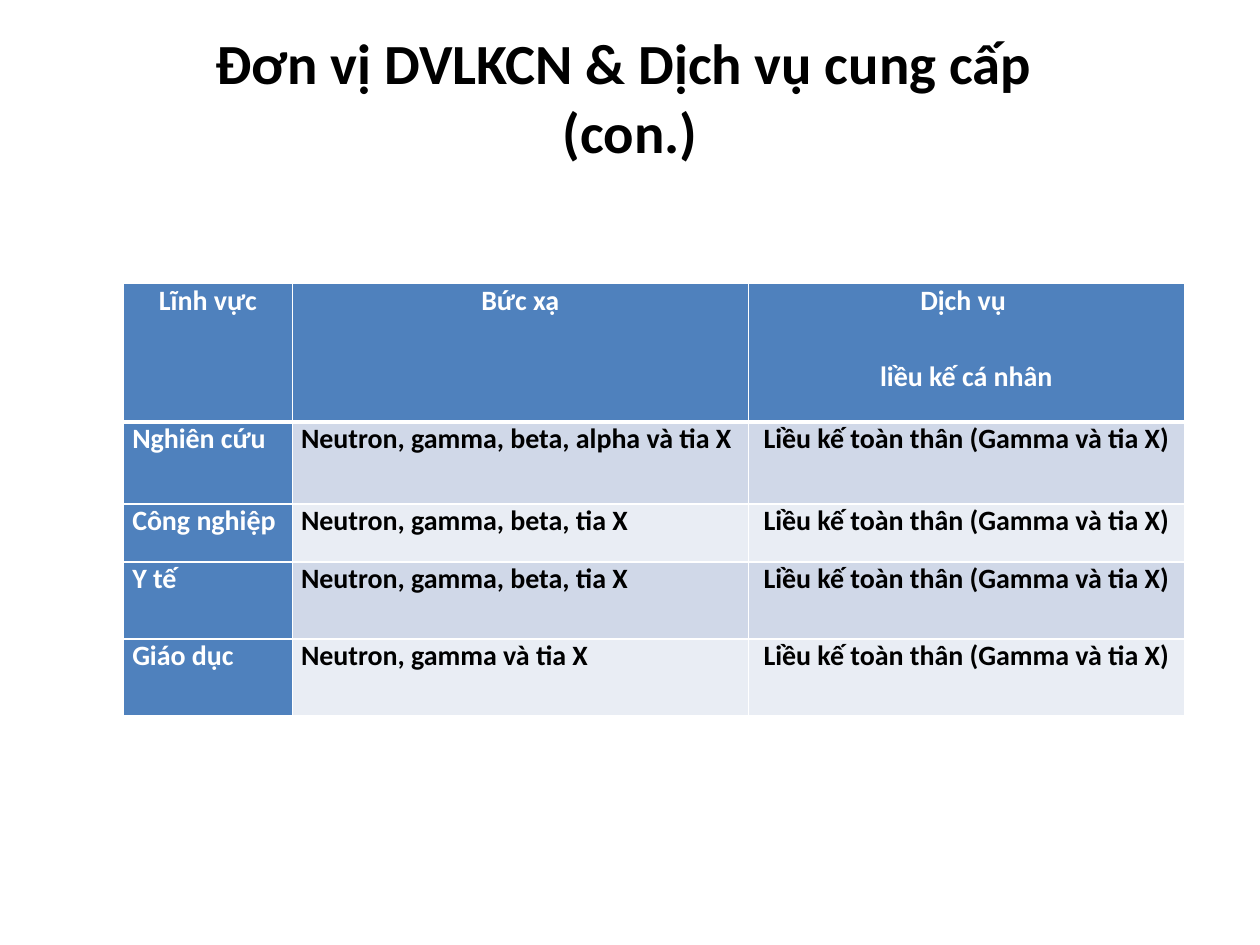
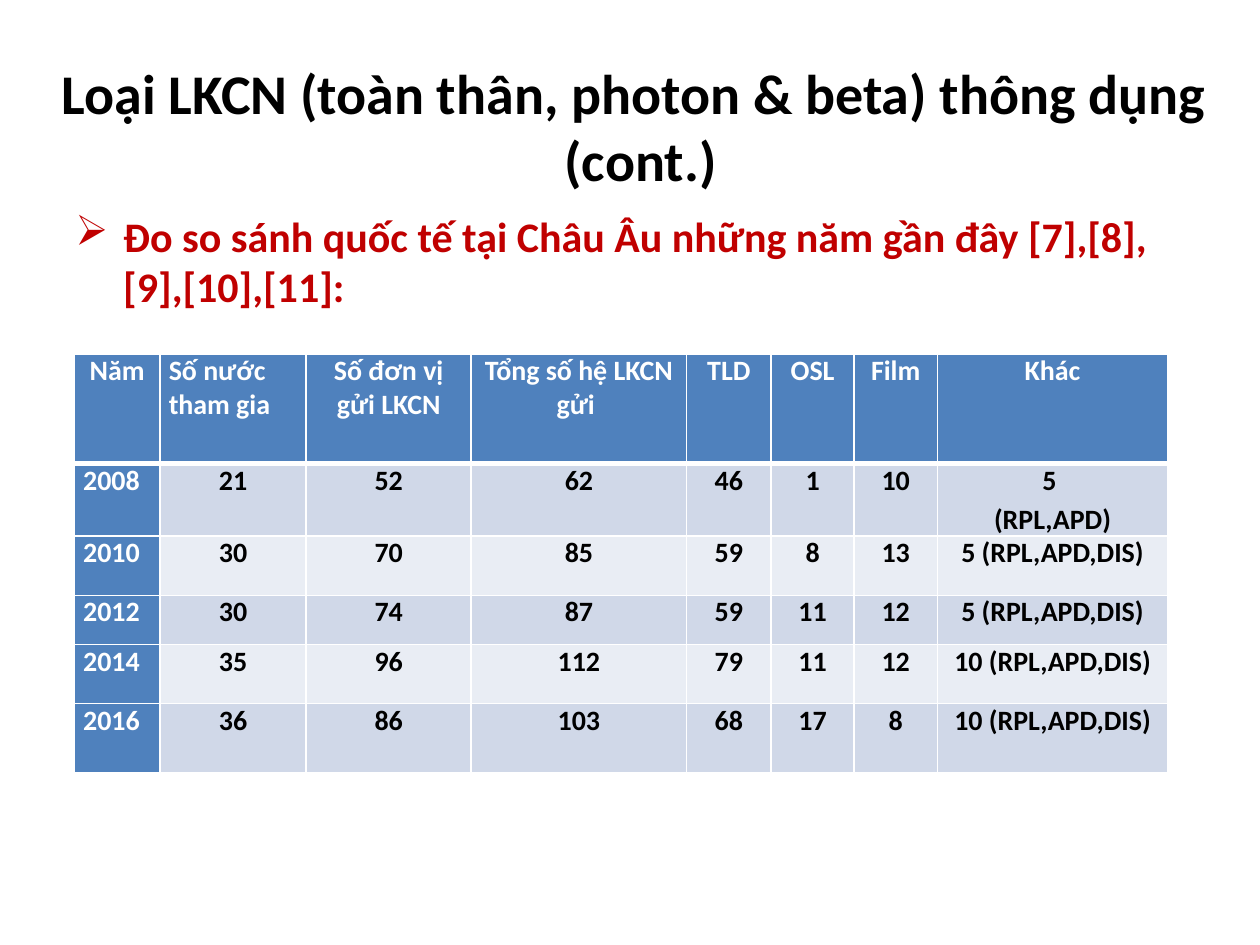
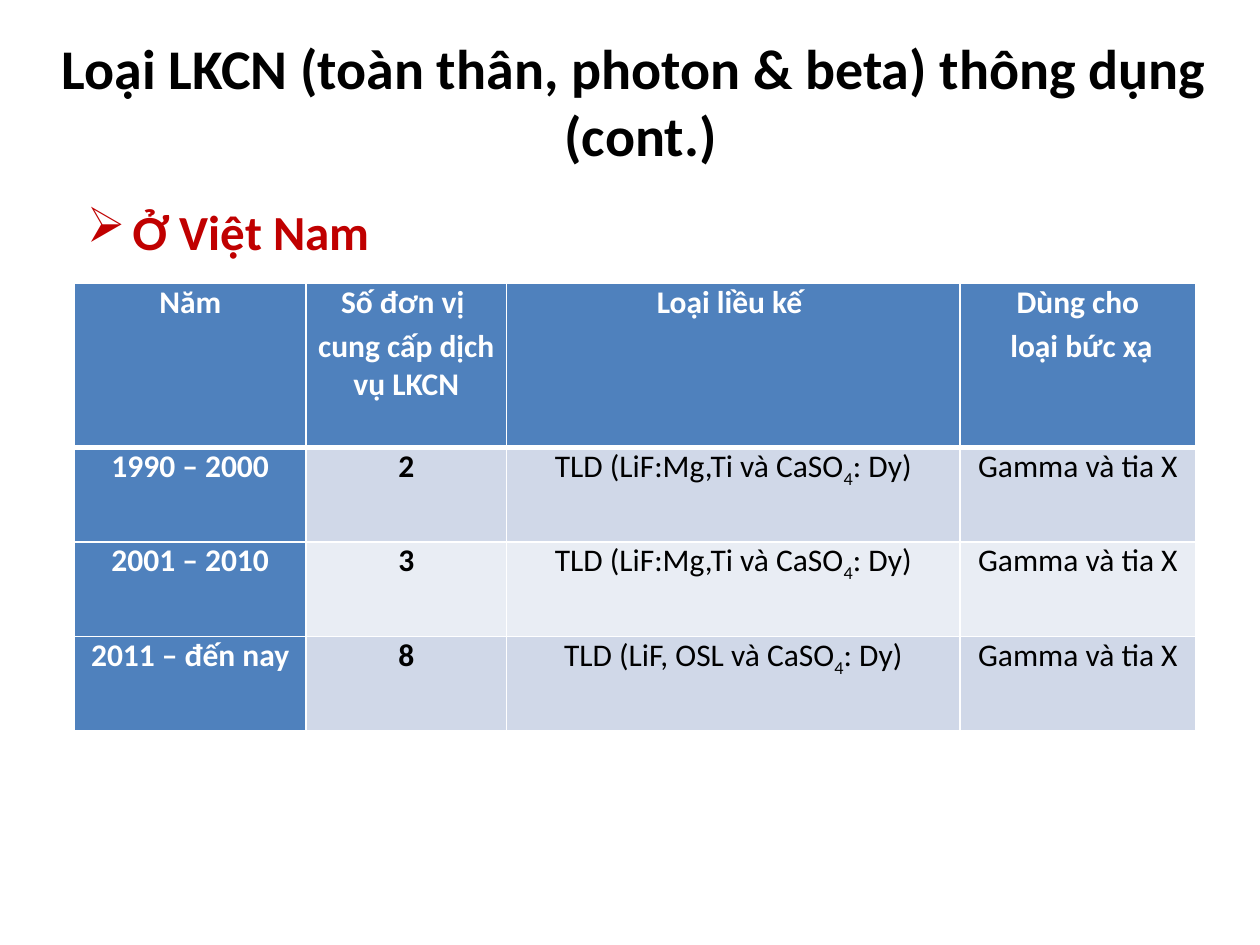
"""Build three slides on personal dosimetry services, each with a title and a table."""
import dataclasses
import typing

import lxml.etree
import pptx
import pptx.dml.color
import pptx.enum.text
import pptx.oxml.ns
import pptx.util

Inches = pptx.util.Inches
Pt = pptx.util.Pt
CENTER = pptx.enum.text.PP_ALIGN.CENTER
JUSTIFY = pptx.enum.text.PP_ALIGN.JUSTIFY
LEFT = pptx.enum.text.PP_ALIGN.LEFT

FONT = "Calibri"
COLOURS = {
    "text": "000000",
    "accent": "C00000",
    "white": "FFFFFF",
    "header": "4F81BD",
    "odd_row": "D0D8E8",
    "even_row": "E9EDF4",
}
BULLET = "➢"
BULLET_INDENT = Inches(0.38)
CELL_MARGIN = Inches(0.07)
THIN_BORDER, THICK_BORDER = Pt(1), Pt(3)
SUBSCRIPT_MARK = "~"


class Box(typing.NamedTuple):
    left: float
    top: float
    width: float
    height: float


@dataclasses.dataclass
class TextItem:
    text: str
    box: Box
    size: float


@dataclasses.dataclass
class TableItem:
    box: Box
    widths: list[float]
    heights: list[float]
    rows: list[list[str]]
    size: float
    header_alignments: list[int]
    body_alignments: list[int]
    space_before: float = 0
    space_after: float = 3
    plain_columns: tuple[int, ...] = ()


@dataclasses.dataclass
class SlideItem:
    title: TextItem
    table: TableItem
    bullet: TextItem | None = None


def rgb(name: str) -> pptx.dml.color.RGBColor:
    return pptx.dml.color.RGBColor.from_string(COLOURS[name])


def style_font(paragraph, size: float, colour: str, bold: bool = True) -> None:
    font = paragraph.font
    font.name, font.size, font.bold = FONT, Pt(size), bold
    font.color.rgb = rgb(colour)


def add_text(slide, item: TextItem, colour: str):
    shape = slide.shapes.add_textbox(*map(Inches, item.box))
    shape.text_frame.word_wrap = True
    paragraph = shape.text_frame.paragraphs[0]
    paragraph.text = item.text
    style_font(paragraph, item.size, colour)
    return shape


def add_title(slide, item: TextItem) -> None:
    frame = add_text(slide, item, "text").text_frame
    frame.vertical_anchor = pptx.enum.text.MSO_ANCHOR.MIDDLE
    frame.paragraphs[0].alignment = CENTER


def add_bullet(slide, item: TextItem) -> None:
    paragraph = add_text(slide, item, "accent").text_frame.paragraphs[0]
    paragraph.space_before = Pt(0.2 * item.size)
    properties = paragraph._p.get_or_add_pPr()
    properties.set("marL", str(BULLET_INDENT))
    properties.set("indent", str(-BULLET_INDENT))
    bullet = pptx.oxml.ns.qn("a:buChar")
    marker = lxml.etree.Element(bullet, char=BULLET)
    defaults = properties.find(pptx.oxml.ns.qn("a:defRPr"))
    if defaults is None:
        properties.append(marker)
    else:
        defaults.addprevious(marker)


def set_borders(cell, row: int) -> None:
    properties = cell._tc.get_or_add_tcPr()
    thick_side = {0: "lnB", 1: "lnT"}.get(row)
    for side in ("lnL", "lnR", "lnT", "lnB"):
        width = THICK_BORDER if side == thick_side else THIN_BORDER
        line = lxml.etree.SubElement(properties, pptx.oxml.ns.qn(f"a:{side}"), w=str(width))
        fill = lxml.etree.SubElement(line, pptx.oxml.ns.qn("a:solidFill"))
        lxml.etree.SubElement(fill, pptx.oxml.ns.qn("a:srgbClr"), val=COLOURS["white"])


def fill_cell(cell, item: TableItem, row: int, column: int) -> None:
    heading = row == 0 or column == 0
    set_borders(cell, row)
    cell.fill.solid()
    cell.fill.fore_color.rgb = rgb("header" if heading else "odd_row" if row % 2 else "even_row")
    cell.margin_left = cell.margin_right = CELL_MARGIN
    cell.margin_top = cell.margin_bottom = 0
    alignments = item.body_alignments if row else item.header_alignments
    frame = cell.text_frame
    for index, text in enumerate(item.rows[row][column].split("\n")):
        paragraph = frame.add_paragraph() if index else frame.paragraphs[0]
        paragraph.alignment = alignments[column]
        paragraph.space_before = Pt(item.space_before)
        paragraph.space_after = Pt(item.space_after)
        bold = row == 0 or column not in item.plain_columns
        style_font(paragraph, item.size, "white" if heading else "text", bold)
        for part, piece in enumerate(text.split(SUBSCRIPT_MARK)):
            run = paragraph.add_run()
            run.text = piece
            if part % 2:
                run._r.get_or_add_rPr().set("baseline", "-25000")


def add_table(slide, item: TableItem) -> None:
    frame = slide.shapes.add_table(len(item.rows), len(item.widths), *map(Inches, item.box))
    table = frame.table
    table.horz_banding = False
    for column, width in zip(table.columns, item.widths):
        column.width = Inches(width)
    for row, height in zip(table.rows, item.heights):
        row.height = Inches(height)
    for row in range(len(item.rows)):
        for column in range(len(item.widths)):
            fill_cell(table.cell(row, column), item, row, column)


def add_slide(presentation, item: SlideItem) -> None:
    slide = presentation.slides.add_slide(presentation.slide_layouts[6])
    add_title(slide, item.title)
    if item.bullet:
        add_bullet(slide, item.bullet)
    add_table(slide, item.table)


WHOLE_BODY = "Liều kế toàn thân (Gamma và tia X)"
PHOTON = "Gamma và tia X"
TLD_MIX = "TLD (LiF:Mg,Ti và CaSO~4~: Dy)"
TYPES_TITLE = "Loại LKCN (toàn thân, photon & beta) thông dụng \v(cont.)"

SLIDES = [
    SlideItem(
        title=TextItem("Đơn vị DVLKCN & Dịch vụ cung cấp \v(con.)", Box(0.5, 0.3, 9, 0.93), 32.4),
        table=TableItem(
            box=Box(0.98, 2.25, 8.43, 3.43),
            widths=[1.34, 3.62, 3.46],
            heights=[1.1, 0.65, 0.46, 0.61, 0.61],
            rows=[
                ["Lĩnh vực", "Bức xạ", "Dịch vụ \nliều kế cá nhân"],
                ["Nghiên cứu", "Neutron, gamma, beta, alpha và tia X", WHOLE_BODY],
                ["Công nghiệp", "Neutron, gamma, beta, tia X", WHOLE_BODY],
                ["Y tế", "Neutron, gamma, beta, tia X", WHOLE_BODY],
                ["Giáo dục", "Neutron, gamma và tia X", WHOLE_BODY],
            ],
            size=16,
            header_alignments=[CENTER] * 3,
            body_alignments=[JUSTIFY, JUSTIFY, CENTER],
            space_before=12,
            space_after=12,
        ),
    ),
    SlideItem(
        title=TextItem(TYPES_TITLE, Box(0.28, 0.3, 9.61, 1.4), 32),
        bullet=TextItem(
            "Đo so sánh quốc tế tại Châu Âu những năm gần đây [7],[8],[9],[10],[11]:",
            Box(0.5, 1.62, 9, 5.51),
            24,
        ),
        table=TableItem(
            box=Box(0.59, 2.81, 8.66, 3.33),
            widths=[0.68, 1.16, 1.31, 1.71, 0.67, 0.66, 0.66, 1.83],
            heights=[0.87, 0.39, 0.47, 0.39, 0.47, 0.55],
            rows=[
                ["Năm", "Số nước tham gia", "Số đơn vị gửi LKCN", "Tổng số hệ LKCN gửi ",
                 "TLD", "OSL", "Film", "Khác"],
                ["2008", "21", "52", "62", "46", "1", "10", "5 \n(RPL,APD)"],
                ["2010", "30", "70", "85", "59", "8", "13", "5 (RPL,APD,DIS)"],
                ["2012", "30", "74", "87", "59", "11", "12", "5 (RPL,APD,DIS)"],
                ["2014", "35", "96", "112", "79", "11", "12", "10 (RPL,APD,DIS)"],
                ["2016", "36", "86", "103", "68", "17", "8", "10 (RPL,APD,DIS)"],
            ],
            size=16,
            header_alignments=[CENTER, LEFT] + [CENTER] * 6,
            body_alignments=[JUSTIFY] + [CENTER] * 7,
        ),
    ),
    SlideItem(
        title=TextItem(TYPES_TITLE, Box(0.28, 0.13, 9.61, 1.34), 32),
        bullet=TextItem("Ở Việt Nam", Box(0.59, 1.55, 9.29, 3.7), 28),
        table=TableItem(
            box=Box(0.59, 2.25, 8.9, 3.54),
            widths=[1.84, 1.59, 3.6, 1.87],
            heights=[1.3, 0.75, 0.75, 0.75],
            rows=[
                ["Năm", "Số đơn vị \ncung cấp dịch vụ LKCN", "Loại liều kế ",
                 "Dùng cho\n loại bức xạ"],
                ["1990 – 2000", "2", TLD_MIX, PHOTON],
                ["2001 – 2010", "3", TLD_MIX, PHOTON],
                ["2011 – đến nay", "8", "TLD (LiF, OSL và CaSO~4~: Dy)", PHOTON],
            ],
            size=18,
            header_alignments=[CENTER] * 4,
            body_alignments=[CENTER] * 4,
            plain_columns=(2, 3),
        ),
    ),
]


def main() -> None:
    presentation = pptx.Presentation()
    presentation.slide_width, presentation.slide_height = Inches(10), Inches(7.5)
    for item in SLIDES:
        add_slide(presentation, item)
    presentation.save("out.pptx")


if __name__ == "__main__":
    main()
